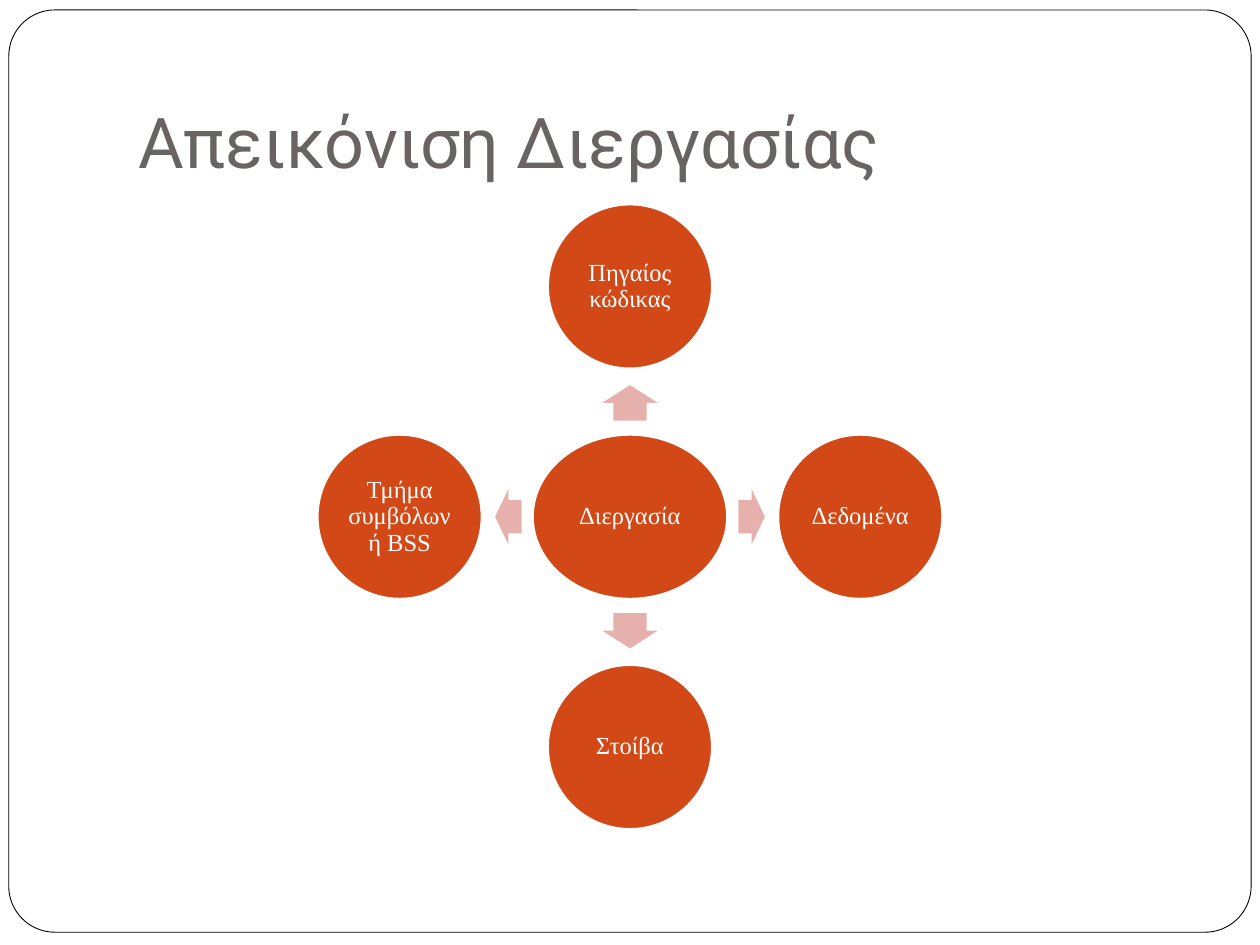
"""Build the process image slide: a hub with four parts around it."""
import pptx
import pptx.dml.color
import pptx.enum.shapes
import pptx.enum.text
import pptx.util

Pt = pptx.util.Pt
SHAPES = pptx.enum.shapes.MSO_SHAPE
ANCHOR = pptx.enum.text.MSO_ANCHOR

COLORS = {"paper": "FFFFFF", "frame": "000000", "title": "696464",
          "circle": "D34817", "arrow": "E6B1AC", "label": "FFFFFF"}
TITLE = "Απεικόνιση Διεργασίας"
HUB = "Διεργασία"
PARTS = [
    ("Πηγαίος κώδικας", 0, -1, 270),
    ("Δεδομένα", 1, 0, 0),
    ("Στοίβα", 0, 1, 90),
    ("Τμήμα συμβόλων ή BSS", -1, 0, 180),
]

CENTER_X, CENTER_Y = 360, 295.3
DIAMETER, HUB_WIDTH = 93.6, 110.9
ORBIT = 131.6
ARROW_HEIGHT = 31.7
ARROW_ACROSS = {"width": 15.2, "distance": 69.5}
ARROW_UPRIGHT = {"width": 20.2, "distance": 65.1}


def rgb(name):
    return pptx.dml.color.RGBColor.from_string(COLORS[name])


def add_filled(slide, preset, center_x, center_y, width, height, fill, line=None, weight=1):
    shape = slide.shapes.add_shape(preset, Pt(center_x - width / 2), Pt(center_y - height / 2),
                                   Pt(width), Pt(height))
    shape.shadow.inherit = False
    shape.fill.solid()
    shape.fill.fore_color.rgb = rgb(fill)
    if line:
        shape.line.color.rgb = rgb(line)
        shape.line.width = Pt(weight)
    else:
        shape.line.fill.background()
    return shape


def write(frame, words, font, size, color, anchor, insets):
    frame.word_wrap = True
    frame.vertical_anchor = anchor
    frame.margin_left, frame.margin_top, frame.margin_right, frame.margin_bottom = map(Pt, insets)
    run = frame.paragraphs[0].add_run()
    run.text = words
    run.font.name, run.font.size = font, Pt(size)
    run.font.color.rgb = rgb(color)
    return frame.paragraphs[0]


def add_circle(slide, words, center_x, center_y, width=DIAMETER):
    circle = add_filled(slide, SHAPES.OVAL, center_x, center_y, width, DIAMETER,
                        "circle", "paper")
    label = write(circle.text_frame, words, "Times New Roman", 14, "label",
                  ANCHOR.MIDDLE, [1.4] * 4)
    label.alignment = pptx.enum.text.PP_ALIGN.CENTER
    label.line_spacing = 0.9


def add_arrow(slide, across, down, turn):
    size = ARROW_ACROSS if across else ARROW_UPRIGHT
    arrow = add_filled(slide, SHAPES.RIGHT_ARROW, CENTER_X + across * size["distance"],
                       CENTER_Y + down * size["distance"], size["width"], ARROW_HEIGHT, "arrow")
    arrow.adjustments[0], arrow.adjustments[1] = 0.6, 0.5
    arrow.rotation = turn


def main():
    deck = pptx.Presentation()
    deck.slide_width, deck.slide_height = Pt(720), Pt(540)
    slide = deck.slides.add_slide(deck.slide_layouts[6])

    frame = add_filled(slide, SHAPES.ROUNDED_RECTANGLE, 360, 269.2, 709.9, 527,
                       "paper", "frame", 0.5)
    frame.adjustments[0] = 0.05

    heading = slide.shapes.add_textbox(Pt(72), Pt(21.6), Pt(612), Pt(90))
    write(heading.text_frame, TITLE, "Roboto", 40, "title", ANCHOR.BOTTOM, (7.2, 3.6, 7.2, 7.2))

    add_circle(slide, HUB, CENTER_X, CENTER_Y, HUB_WIDTH)
    for words, across, down, turn in PARTS:
        add_arrow(slide, across, down, turn)
        add_circle(slide, words, CENTER_X + across * ORBIT, CENTER_Y + down * ORBIT)

    deck.save("out.pptx")


if __name__ == "__main__":
    main()
